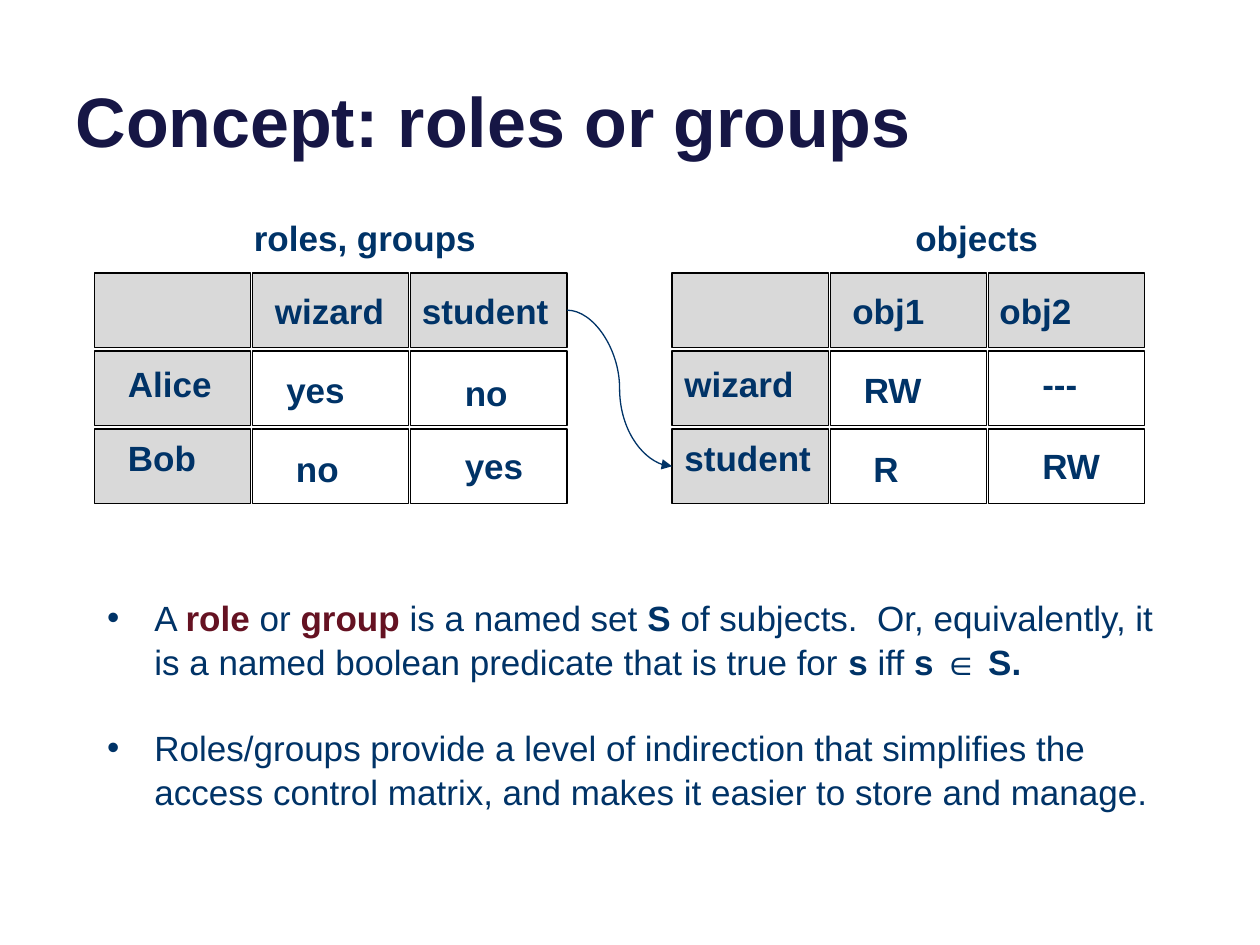
from lxml.etree import SubElement
from pptx import Presentation
from pptx.dml.color import RGBColor
from pptx.enum.shapes import MSO_CONNECTOR, MSO_SHAPE
from pptx.enum.text import MSO_ANCHOR, MSO_AUTO_SIZE, PP_ALIGN
from pptx.oxml.ns import qn
from pptx.util import Pt

NAVY = RGBColor(0x00, 0x33, 0x67)
INK = RGBColor(0x16, 0x16, 0x45)
WINE = RGBColor(0x65, 0x12, 0x22)
GREY = RGBColor(0xD9, 0xD9, 0xD9)
BLACK = RGBColor(0, 0, 0)

CELL_W, CELL_H = 89.3, 42.5
STEP_X, STEP_Y = 90.4, 44.6

POINTS = [
    [("A ", NAVY, False), ("role ", WINE, True), ("or ", NAVY, False),
     ("group ", WINE, True), ("is a named set ", NAVY, False),
     ("S", NAVY, True),
     (" of subjects.  Or, equivalently, it is a named boolean predicate "
      "that is true for ", NAVY, False),
     ("s ", NAVY, True), ("iff ", NAVY, False), ("s ", NAVY, True),
     ("∈ ", NAVY, False), ("S.", NAVY, True)],
    [("Roles/groups provide a level of indirection that simplifies the "
      "access control matrix, and makes it easier to store and manage.",
      NAVY, False)],
]


def style(run, size, color, bold):
    font = run.font
    font.name, font.size, font.bold = "Arial", Pt(size), bold
    font.color.rgb = color


def place(shape, x, y, w, h):
    shape.left, shape.top, shape.width, shape.height = map(Pt, (x, y, w, h))


def add_title(slide, x, y, w, h):
    title = slide.shapes.title
    place(title, x, y, w, h)
    frame = title.text_frame
    frame.text = "Concept: roles or groups"
    frame.auto_size = MSO_AUTO_SIZE.NONE
    frame.vertical_anchor = MSO_ANCHOR.BOTTOM
    para = frame.paragraphs[0]
    para.alignment = PP_ALIGN.LEFT
    style(para.runs[0], 40, INK, True)


def add_label(slide, text, x, y, w):
    box = slide.shapes.add_textbox(Pt(x), Pt(y), Pt(w), Pt(31.7))
    frame = box.text_frame
    frame.word_wrap = True
    frame.text = text
    style(frame.paragraphs[0].runs[0], 20, NAVY, True)


def add_cells(slide, x, y):
    """Draw the 3 by 3 grid, shading its first row and column."""
    group = slide.shapes.add_group_shape()
    cells = {}
    for row in range(3):
        for col in range(3):
            cell = group.shapes.add_shape(
                MSO_SHAPE.RECTANGLE, Pt(x + col * STEP_X),
                Pt(y + row * STEP_Y), Pt(CELL_W), Pt(CELL_H))
            cell.shadow.inherit = False
            cell.line.color.rgb = BLACK
            cell.line.width = Pt(0.75)
            if row and col:
                cell.fill.background()
            else:
                cell.fill.solid()
                cell.fill.fore_color.rgb = GREY
            cells[row, col] = cell
    return cells


def add_matrix(slide, x, y, caption, cap_x, cap_w, heads, names, values,
               name_x=0, last_y=52.5):
    """Place a captioned grid; name_x and last_y set the row names' left
    edge and the height of the top right value."""
    cells = add_cells(slide, x, y)
    add_label(slide, caption, x + cap_x, y - 36, cap_w)
    spots = [(96, 6), (180, 6), (name_x, 47.5), (name_x, 90),
             (102.5, 51), (204.5, last_y), (108, 96), (204.5, 94.5)]
    for text, (dx, dy) in zip(heads + names + values, spots):
        add_label(slide, text, x + dx, y + dy, 90)
    return cells


def add_link(slide, start, end):
    link = slide.shapes.add_connector(MSO_CONNECTOR.CURVE, 0, 0, 0, 0)
    link.begin_connect(start, 3)
    link.end_connect(end, 1)
    link.line.color.rgb = NAVY
    link.line.width = Pt(0.75)
    SubElement(link.line._get_or_add_ln(), qn("a:tailEnd"), type="triangle")
    SubElement(link._element.spPr, qn("a:effectLst"))


def add_points(slide, x, y, w, h):
    body = slide.placeholders[1]
    place(body, x, y, w, h)
    frame = body.text_frame
    frame.auto_size = MSO_AUTO_SIZE.NONE
    for i, parts in enumerate(POINTS):
        para = frame.add_paragraph() if i else frame.paragraphs[0]
        para.line_spacing = 1.05
        para.space_before = Pt(24 if i else 0)
        for text, color, bold in parts:
            run = para.add_run()
            run.text = text
            style(run, 20, color, bold)


def main():
    deck = Presentation()
    deck.slide_width, deck.slide_height = Pt(720), Pt(540)
    slide = deck.slides.add_slide(deck.slide_layouts[1])
    add_title(slide, 36, -26.5, 648, 122.4)
    roles = add_matrix(
        slide, 54, 156, "roles, groups", 84, 174, ["wizard", "student"],
        ["Alice", "Bob"], ["yes", "no", "no", "yes"], name_x=12)
    rights = add_matrix(
        slide, 384, 156, "objects", 132, 108, ["obj1", "obj2"],
        ["wizard", "student"], ["RW", "---", "R", "RW"], last_y=47.5)
    add_link(slide, roles[0, 2], rights[2, 0])
    add_points(slide, 54, 336, 624, 128)
    deck.save("out.pptx")


if __name__ == "__main__":
    main()
